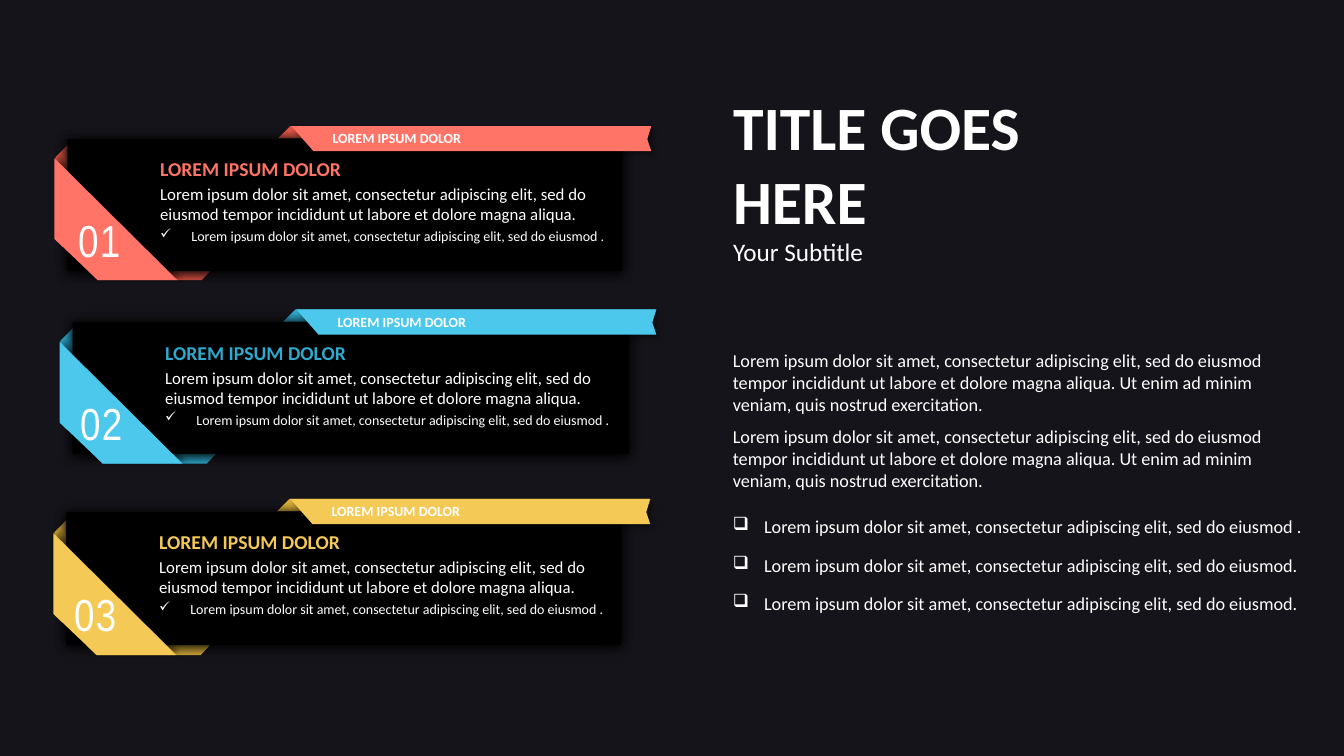
from dataclasses import dataclass

from lxml.etree import SubElement
from pptx import Presentation
from pptx.dml.color import RGBColor as RGB
from pptx.enum.shapes import MSO_SHAPE as SHAPE
from pptx.enum.text import MSO_ANCHOR as ANCHOR, MSO_AUTO_SIZE as AUTO, PP_ALIGN as ALIGN
from pptx.oxml.ns import qn
from pptx.util import Inches, Pt

COLORS = {
    "background": "15141A", "black": "000000", "white": "FFFFFF",
    "coral": "FF7467", "coral_dark": "E15649",
    "blue": "4CC8EC", "blue_dark": "2EAACE",
    "yellow": "F4C956", "yellow_dark": "D6AB38",
}
HEADING = "LOREM IPSUM DOLOR"
SENTENCE = "Lorem ipsum dolor sit amet, consectetur adipiscing elit, sed do eiusmod"
SUMMARY = SENTENCE + " tempor incididunt ut labore et dolore magna aliqua."
PARAGRAPH = SUMMARY + " Ut enim ad minim veniam, quis nostrud exercitation."

Points = list[tuple[float, float]]


@dataclass(frozen=True)
class Shadow:
    alpha: int
    blur: float
    distance: float
    angle: int


@dataclass(frozen=True)
class Card:
    number: str
    left: float
    top: float
    color: str
    fold: str
    heading: str
    number_left: float
    number_top: float
    frame_dx: float = 0
    frame_dy: float = 0.01
    fold_dy: float = 0


CARD_SHADOW = Shadow(100, 8.5, 1, 90)
CORNER_SHADOW = Shadow(40, 4, 3, 315)
RIBBON_SHADOW = Shadow(40, 4, 3, 45)
CARDS = [
    Card("01", 0.55, 1.25, "coral", "coral_dark", "coral", 0.68, 2.08),
    Card("02", 0.6, 3.07, "blue", "blue_dark", "blue_dark", 0.7, 3.9,
         frame_dx=0.02, frame_dy=0),
    Card("03", 0.54, 4.95, "yellow", "yellow_dark", "yellow", 0.64, 5.79,
         frame_dy=0.02, fold_dy=0.02),
]
FOLD_BOTTOM = [(0.29, 1.37), (1.6, 1.37), (1.45, 1.53), (0.42, 1.53), (0.27, 1.39)]
FOLD_LEFT = [(0.17, 0.14), (0.17, 1.1), (0.07, 1.2), (0, 1.13), (0, 0.31)]
FOLD_TOP = [(2.33, 0), (5.9, 0), (5.86, 0.12), (2.21, 0.12)]
CORNER = [(-0.01, 0.32), (1.21, 1.53), (0.42, 1.53), (-0.01, 1.12)]
RIBBON = [(2.34, 0), (5.91, 0), (5.87, 0.13), (5.91, 0.25), (2.56, 0.25)]
FRAME_INNER = [(0.16, 0.18), (0.16, 1.38), (5.58, 1.38), (5.58, 0.18)]
FRAME_OUTER = [(0.12, 0.13), (5.62, 0.13), (5.62, 1.43), (0.12, 1.43)]


def paint(sp, color: str, shadow: Shadow | None = None) -> None:
    sp.fill.solid()
    sp.fill.fore_color.rgb = RGB.from_string(COLORS[color])
    sp.line.fill.background()
    sp.shadow.inherit = False
    if shadow:
        effects = sp._element.spPr.find(qn("a:effectLst"))
        outer = SubElement(effects, qn("a:outerShdw"), blurRad=str(Pt(shadow.blur)),
                           dist=str(Pt(shadow.distance)), dir=str(shadow.angle * 60000),
                           algn="ctr", rotWithShape="0")
        tone = SubElement(outer, qn("a:srgbClr"), val=COLORS["black"])
        SubElement(tone, qn("a:alpha"), val=str(shadow.alpha * 1000))


def add_outline(s, contours: list[Points], left: float, top: float, color: str,
                shadow: Shadow | None = None) -> None:
    placed = [[(Inches(left + x), Inches(top + y)) for x, y in c] for c in contours]
    builder = s.shapes.build_freeform(*placed[0][0], scale=1.0)
    builder.add_line_segments(placed[0][1:], close=True)
    for contour in placed[1:]:
        builder.move_to(*contour[0])
        builder.add_line_segments(contour[1:], close=True)
    paint(builder.convert_to_shape(), color, shadow)


def add_text_box(s, left: float, top: float, width: float, height: float,
                 tight: bool = False):
    sp = s.shapes.add_textbox(Inches(left), Inches(top), Inches(width), Inches(height))
    tf = sp.text_frame
    tf.word_wrap = True
    if tight:
        tf.margin_left = tf.margin_right = Inches(0.07)
        tf.margin_top = tf.margin_bottom = Inches(0.03)
    return tf


def write(tf, text: str, size: float, color: str = "white", bold: bool = False,
          font: str = "Calibri", align: ALIGN = ALIGN.LEFT, before: float = 0,
          bullet: str = "", spacing: float = 0) -> None:
    p = tf.paragraphs[0] if not tf.text else tf.add_paragraph()
    if bullet:
        pPr = p._p.get_or_add_pPr()
        pPr.set("marL", str(Inches(0.31)))
        pPr.set("indent", str(-Inches(0.31)))
        SubElement(pPr, qn("a:buChar"), char=bullet)
    p.alignment = align
    p.space_before = Pt(before)
    r = p.add_run()
    r.text = text
    r.font.name = font
    r.font.size = Pt(size)
    r.font.bold = bold
    r.font.color.rgb = RGB.from_string(COLORS[color])
    if spacing:
        r._r.get_or_add_rPr().set("spc", str(int(spacing * 100)))


def add_card(s, card: Card) -> None:
    x, y = card.left, card.top
    for fold in (FOLD_BOTTOM, FOLD_LEFT):
        add_outline(s, [fold], x, y + card.fold_dy, card.fold)
    add_outline(s, [FOLD_TOP], x, y, card.fold)
    panel = s.shapes.add_shape(SHAPE.RECTANGLE, Inches(x + 0.12), Inches(y + 0.13),
                               Inches(5.5), Inches(1.3))
    paint(panel, "black", CARD_SHADOW)
    add_outline(s, [FRAME_INNER, FRAME_OUTER], x + card.frame_dx, y + card.frame_dy,
                "black", CARD_SHADOW)

    tf = add_text_box(s, x + 0.94, y + 0.26, 4.61, 1.14)
    write(tf, HEADING, 14, color=card.heading, bold=True)
    write(tf, SUMMARY, 12, before=2.4)
    write(tf, SENTENCE + " .", 10, before=2.4, bullet="✓")

    add_outline(s, [CORNER], x, y + card.fold_dy, card.color, CORNER_SHADOW)
    tf = add_text_box(s, card.number_left, card.number_top, 0.61, 0.61, tight=True)
    write(tf, card.number, 32, font="Arial Narrow", align=ALIGN.CENTER, spacing=1)

    add_outline(s, [RIBBON], x, y, card.color, RIBBON_SHADOW)
    tf = add_text_box(s, x + 2.43, y + 0.01, 1.91, 0.24, tight=True)
    write(tf, HEADING, 10, bold=True, align=ALIGN.CENTER)


def add_title(s) -> None:
    title = s.shapes.title
    title.left, title.top = Inches(7.17), Inches(0.83)
    title.width, title.height = Inches(3.43), Inches(1.88)
    tf = title.text_frame
    tf.word_wrap = True
    tf.auto_size = AUTO.NONE
    tf.vertical_anchor = ANCHOR.TOP
    write(tf, "TITLE GOES HERE", 44, bold=True)
    write(tf, "Your Subtitle", 18)


def add_body(s) -> None:
    tf = add_text_box(s, 7.17, 3.42, 5.92, 3.4)
    write(tf, PARAGRAPH, 13)
    write(tf, PARAGRAPH, 13, before=7.3)
    for ending, before in ((" .", 17), (".", 12.2), (".", 12.2)):
        write(tf, SENTENCE + ending, 13, before=before, bullet="❑")


def main() -> None:
    prs = Presentation()
    prs.slide_width, prs.slide_height = Inches(13.33), Inches(7.5)
    s = prs.slides.add_slide(prs.slide_layouts[5])
    s.background.fill.solid()
    s.background.fill.fore_color.rgb = RGB.from_string(COLORS["background"])
    add_title(s)
    add_body(s)
    for card in CARDS:
        add_card(s, card)
    prs.save("out.pptx")


if __name__ == "__main__":
    main()
